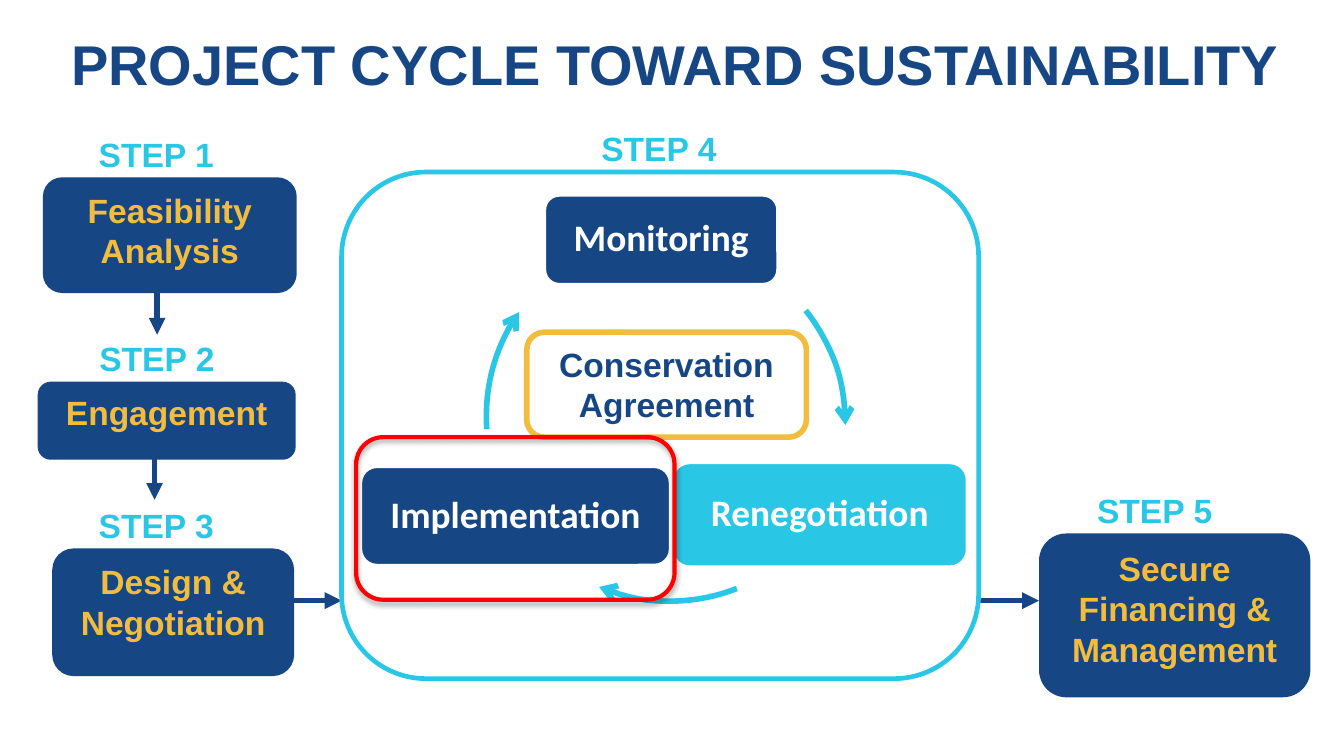
from lxml import etree
from pptx import Presentation
from pptx.dml.color import RGBColor
from pptx.enum.shapes import MSO_CONNECTOR as Connector, MSO_SHAPE as Shape
from pptx.enum.text import MSO_ANCHOR as Anchor, PP_ALIGN as Align
from pptx.oxml.ns import qn
from pptx.util import Pt

NAVY, CYAN, GOLD = "174685", "29C7E5", "F2BD3E"
WHITE, RED = "FFFFFF", "FF0000"
LABEL_WIDTH, LABEL_HEIGHT, LABEL_RISE = 104, 24, 27


def color(value):
    return RGBColor.from_string(value)


def write_text(shape, text, size=18, font="Arial", fill=NAVY,
               anchor=Anchor.TOP, spacing=None):
    frame = shape.text_frame
    frame.word_wrap = True
    frame.vertical_anchor = anchor
    paragraph = frame.paragraphs[0]
    paragraph.alignment = Align.CENTER
    paragraph.line_spacing = spacing
    run = paragraph.add_run()
    run.text = text
    run.font.size = Pt(size)
    run.font.name = font
    run.font.bold = True
    run.font.color.rgb = color(fill)


def add_textbox(slide, left, top, width, height, text, **text_format):
    box = slide.shapes.add_textbox(Pt(left), Pt(top), Pt(width), Pt(height))
    write_text(box, text, **text_format)


def add_box(slide, left, top, width, height, kind=Shape.ROUNDED_RECTANGLE,
            fill=None, line=None, line_width=0):
    shape = slide.shapes.add_shape(kind, Pt(left), Pt(top), Pt(width), Pt(height))
    shape.shadow.inherit = False
    if fill:
        shape.fill.solid()
        shape.fill.fore_color.rgb = color(fill)
    else:
        shape.fill.background()
    if line:
        shape.line.color.rgb = color(line)
        shape.line.width = Pt(line_width)
    else:
        shape.line.fill.background()
    return shape


def add_arrowhead(shape, kind):
    etree.SubElement(shape.get_or_add_ln(), qn("a:tailEnd"), type=kind)


def add_arrow(slide, start_x, start_y, end_x, end_y):
    arrow = slide.shapes.add_connector(
        Connector.STRAIGHT, Pt(start_x), Pt(start_y), Pt(end_x), Pt(end_y))
    arrow.line.color.rgb = color(NAVY)
    arrow.line.width = Pt(3)
    add_arrowhead(arrow, "triangle")
    etree.SubElement(arrow._element.spPr, qn("a:effectLst"))


def add_arc_arrow(slide, left, top, size, start_angle, end_angle):
    """Draw part of a circle, clockwise, with angles in degrees from the right."""
    arc = add_box(slide, left, top, size, size, kind=Shape.ARC,
                  line=CYAN, line_width=3)
    # An angle is kept in 60000ths of a degree, an adjustment in 100000ths.
    arc.adjustments[0] = start_angle * 0.6
    arc.adjustments[1] = end_angle * 0.6
    add_arrowhead(arc, "arrow")


def add_soft_shadow(shape):
    effects = shape._element.spPr.find(qn("a:effectLst"))
    shadow = etree.SubElement(
        effects, qn("a:outerShdw"), blurRad=str(Pt(3.1)), dist=str(Pt(1.8)),
        dir="5400000", rotWithShape="0")
    black = etree.SubElement(shadow, qn("a:srgbClr"), val="000000")
    etree.SubElement(black, qn("a:alpha"), val="35000")


def add_step_label(slide, left, box_top, number):
    add_textbox(slide, left, box_top - LABEL_RISE, LABEL_WIDTH, LABEL_HEIGHT,
                f"STEP {number}", fill=CYAN)


def add_step(slide, left, top, width, height, number, text, label_indent):
    box = add_box(slide, left, top, width, height, fill=NAVY)
    write_text(box, text, fill=GOLD)
    add_step_label(slide, left + label_indent, top, number)


def add_cycle(slide, left, top, width, height):
    """Draw the frame of step 4 with its three stages around the agreement."""
    add_box(slide, left, top, width, height, line=CYAN, line_width=2.5)
    add_step_label(slide, left + 118, top, 4)

    stages = [
        ("Monitoring", NAVY, 108.6, 12.2, 125.3, 48.2),
        ("Renegotiation", CYAN, 177, 155.5, 158.4, 56.2),
        ("Implementation", NAVY, 10, 157.6, 166.3, 53.3),
    ]
    for text, fill, x, y, stage_width, stage_height in stages:
        stage = add_box(slide, left + x, top + y, stage_width, stage_height,
                        fill=fill, line=WHITE, line_width=2)
        write_text(stage, text, size=20, font="Calibri", fill=WHITE,
                   anchor=Anchor.MIDDLE, spacing=0.9)

    arcs = [(73.3, 36.9, 321.6, 0.2), (77.6, 33.3, 68.6, 112.7),
            (77.6, 32.6, 176, 214.6)]
    for x, y, start_angle, end_angle in arcs:
        add_arc_arrow(slide, left + x, top + y, 196.6, start_angle, end_angle)

    agreement = add_box(slide, left + 99.2, top + 85.8, 149.8, 56.2,
                        line=GOLD, line_width=3)
    write_text(agreement, "Conservation Agreement")

    highlight = add_box(slide, left + 7.8, top + 142, 170.6, 87.1,
                        line=RED, line_width=2.25)
    add_soft_shadow(highlight)


def main():
    presentation = Presentation()
    presentation.slide_width, presentation.slide_height = Pt(720), Pt(405)
    slide = presentation.slides.add_slide(presentation.slide_layouts[6])

    add_textbox(slide, 18, 20.2, 687.6, 27.4, "PROJECT CYCLE TOWARD SUSTAINABILITY",
                size=30, anchor=Anchor.MIDDLE)

    arrows = [(84.2, 155.5, 84.2, 179.3), (82.8, 237.6, 82.8, 267.8),
              (137.5, 321.8, 183, 321.8), (524.9, 321.8, 556.6, 321.8)]
    for ends in arrows:
        add_arrow(slide, *ends)

    steps = [
        (23, 95, 136, 62, 1, "Feasibility Analysis", 8.7),
        (20.2, 204.5, 138.2, 41.8, 2, "Engagement", 11.9),
        (28, 293.8, 129.6, 68.4, 3, "Design & Negotiation", 3.7),
        (556.6, 285.8, 145.4, 87.8, 5, "Secure Financing & Management", 10),
    ]
    for step in steps:
        add_step(slide, *step)

    add_cycle(slide, 183, 92.2, 341.3, 271.4)
    presentation.save("out.pptx")


if __name__ == "__main__":
    main()
